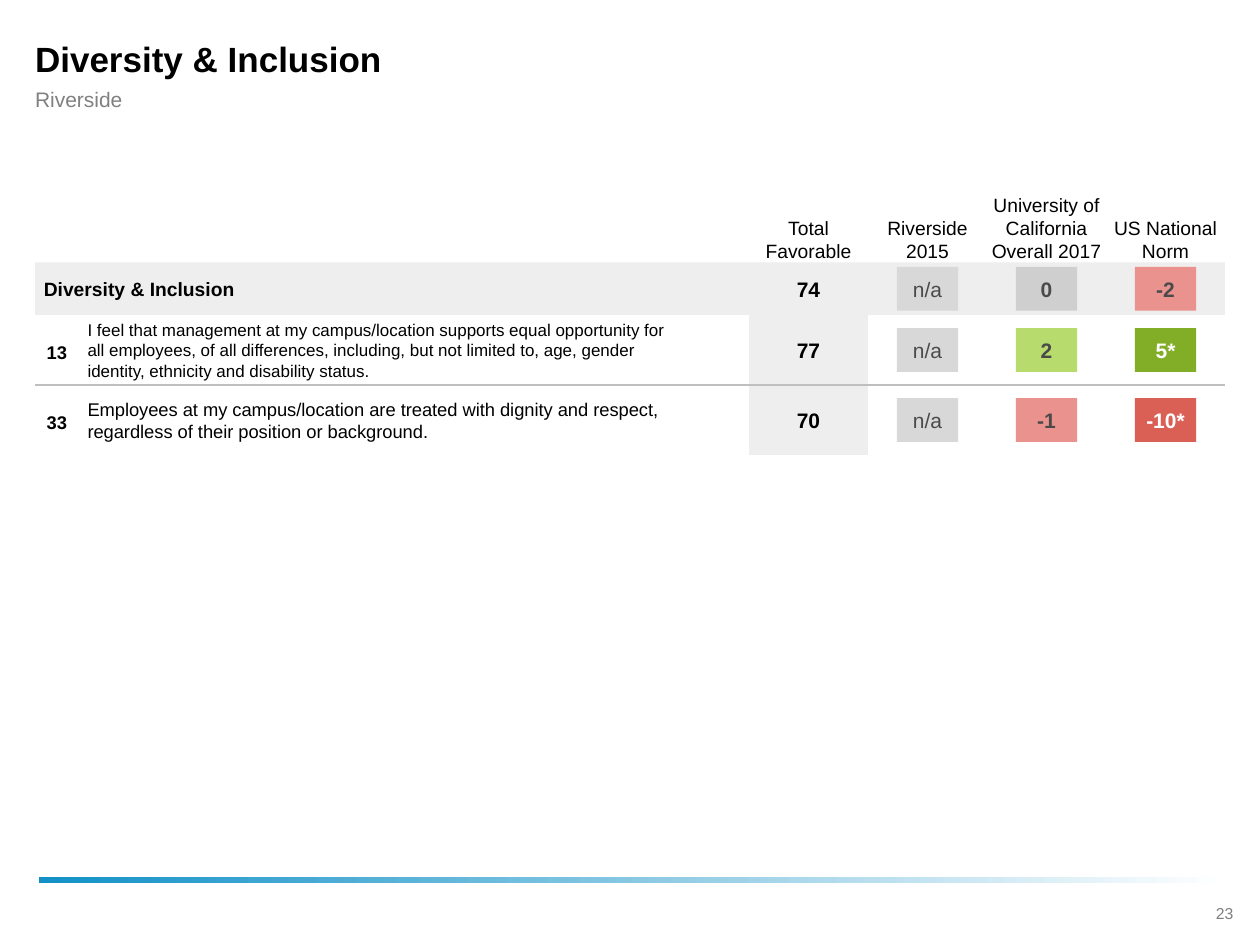
from lxml import etree
from pptx import Presentation
from pptx.dml.color import RGBColor
from pptx.enum.shapes import MSO_CONNECTOR as Connector, MSO_SHAPE as Preset
from pptx.enum.text import MSO_ANCHOR as Anchor, MSO_AUTO_SIZE as AutoSize, PP_ALIGN as Align
from pptx.oxml.ns import qn
from pptx.util import Pt

LEFT, WIDTH = 20, 680
COLUMN_LEFT, COLUMN_WIDTH = 428, 68
CHIP_WIDTH, CHIP_HEIGHT = 35, 25
BAND = "EEEEEE"
HEADINGS = ["Total Favorable", "Riverside 2015",
            "University of California Overall 2017", "US National Norm"]
MISSING = ("n/a", "D8D8D8", "4A4A4A", False)
SUMMARY = ("Diversity & Inclusion", "74",
           [MISSING, ("0", "CFCFCF", "4A4A4A", True), ("-2", "E9928E", "4A4A4A", True)])
QUESTIONS = [
    ("13", "I feel that management at my campus/location supports equal opportunity for "
           "all employees, of all differences, including, but not limited to, age, gender "
           "identity, ethnicity and disability status.", 9.7, "77",
     [MISSING, ("2", "B7DB6C", "4A4A4A", True), ("5*", "81AD27", "FFFFFF", True)]),
    ("33", "Employees at my campus/location are treated with dignity and respect, "
           "regardless of their position or background.", 10.5, "70",
     [MISSING, ("-1", "E9928E", "4A4A4A", True), ("-10*", "DA6056", "FFFFFF", True)]),
]


def rgb(code):
    """Turn a hex string into a colour."""
    return RGBColor.from_string(code)


def write(holder, words, size, color="000000", bold=False, align=Align.LEFT,
          anchor=Anchor.MIDDLE, inset=(0, 0), wrap=True):
    """Put one formatted paragraph into a shape; inset is left and right."""
    frame = holder.text_frame
    frame.text = words
    frame.word_wrap = wrap
    frame.auto_size = AutoSize.NONE
    frame.vertical_anchor = anchor
    frame.margin_left, frame.margin_right = map(Pt, inset)
    frame.margin_top = frame.margin_bottom = 0
    paragraph = frame.paragraphs[0]
    paragraph.alignment = align
    font = paragraph.runs[0].font
    font.name, font.size, font.bold = "Arial", Pt(size), bold
    font.color.rgb = rgb(color)


def add_label(slide, box, words, size, **style):
    """Add a text box at a box given in points."""
    write(slide.shapes.add_textbox(*map(Pt, box)), words, size, **style)


def add_block(slide, box, fill=None):
    """Add a borderless rectangle, solid when a fill is given."""
    block = slide.shapes.add_shape(Preset.RECTANGLE, *map(Pt, box))
    block.shadow.inherit = False
    block.line.fill.background()
    if fill:
        block.fill.solid()
        block.fill.fore_color.rgb = rgb(fill)
    return block


def add_heading(slide, left, top, width):
    """Place the title and the campus name below it."""
    title = slide.shapes.title
    title.left, title.top, title.width, title.height = map(Pt, (left, top, width, 27))
    write(title, "Diversity & Inclusion", 20, bold=True, inset=(0, 25))
    add_label(slide, (left, top + 29, width, 15), "Riverside", 12,
              color="808080", inset=(0, 25))


def add_column_headings(slide, left, top, height):
    """Place the score column headings side by side."""
    for index, heading in enumerate(HEADINGS):
        add_label(slide, (left + index * COLUMN_WIDTH, top, COLUMN_WIDTH, height),
                  heading, 11, align=Align.CENTER, anchor=Anchor.BOTTOM)


def add_scores(slide, left, top, height, total, comparisons):
    """Place the total and the coloured comparison chips of one row."""
    add_label(slide, (left, top + (height - 14) / 2, COLUMN_WIDTH, 14), total, 12,
              bold=True, align=Align.CENTER)
    for index, (value, fill, color, bold) in enumerate(comparisons, 1):
        chip_left = left + index * COLUMN_WIDTH + (COLUMN_WIDTH - CHIP_WIDTH) / 2
        chip_top = top + (height - CHIP_HEIGHT) / 2
        chip = add_block(slide, (chip_left, chip_top, CHIP_WIDTH, CHIP_HEIGHT), fill)
        write(chip, value, 12, color=color, bold=bold, align=Align.CENTER, wrap=False)


def add_summary_row(slide, left, top, width, height):
    """Place the shaded row with the category result."""
    name, total, comparisons = SUMMARY
    add_block(slide, (left, top, width, height), BAND)
    add_label(slide, (left, top, COLUMN_LEFT - left, height), name, 11,
              bold=True, inset=(5, 5))
    add_scores(slide, COLUMN_LEFT, top, height, total, comparisons)


def add_question_row(slide, left, top, height, question):
    """Place one numbered question with its scores."""
    number, wording, size, total, comparisons = question
    add_block(slide, (COLUMN_LEFT, top, COLUMN_WIDTH, height), BAND)
    add_label(slide, (left, top + 13, 25, 16), number, 10.5, bold=True, align=Align.CENTER)
    add_label(slide, (left + 25, top + 3.5, 367, 33), wording, size, inset=(5, 25))
    add_scores(slide, COLUMN_LEFT, top, height, total, comparisons)


def add_divider(slide, left, top, width):
    """Draw the thin rule between two questions."""
    rule = slide.shapes.add_connector(Connector.STRAIGHT, Pt(left), Pt(top),
                                      Pt(left + width), Pt(top))
    rule.line.color.rgb = rgb("BFBFBF")
    rule.line.width = Pt(0.75)
    etree.SubElement(rule.element.spPr, qn("a:effectLst"))


def add_footer(slide, left, top, width):
    """Place the fading bar and the page number."""
    fade = add_block(slide, (left, top, width, 3.6)).fill
    fade.gradient()
    fade.gradient_angle = 0
    for stop, color in zip(fade.gradient_stops, ("1291C7", "FFFFFF")):
        stop.color.rgb = rgb(color)
    add_label(slide, (left + width - 19.4, top + 11.5, 37.5, 18), "23", 9,
              color="7F7F7F", align=Align.CENTER)


def main():
    """Build the slide and save it."""
    deck = Presentation()
    deck.slide_width, deck.slide_height = Pt(720), Pt(540)
    slide = deck.slides.add_slide(deck.slide_layouts[5])
    add_footer(slide, 22.3, 501.1, 678.2)
    add_heading(slide, LEFT, 20, WIDTH)
    add_column_headings(slide, COLUMN_LEFT, 70, 80)
    add_summary_row(slide, LEFT, 150, WIDTH, 30)
    for index, question in enumerate(QUESTIONS):
        top = 180 + index * 40
        add_question_row(slide, LEFT, top, 40, question)
        if index:
            add_divider(slide, LEFT, top, WIDTH)
    deck.save("out.pptx")


if __name__ == "__main__":
    main()
